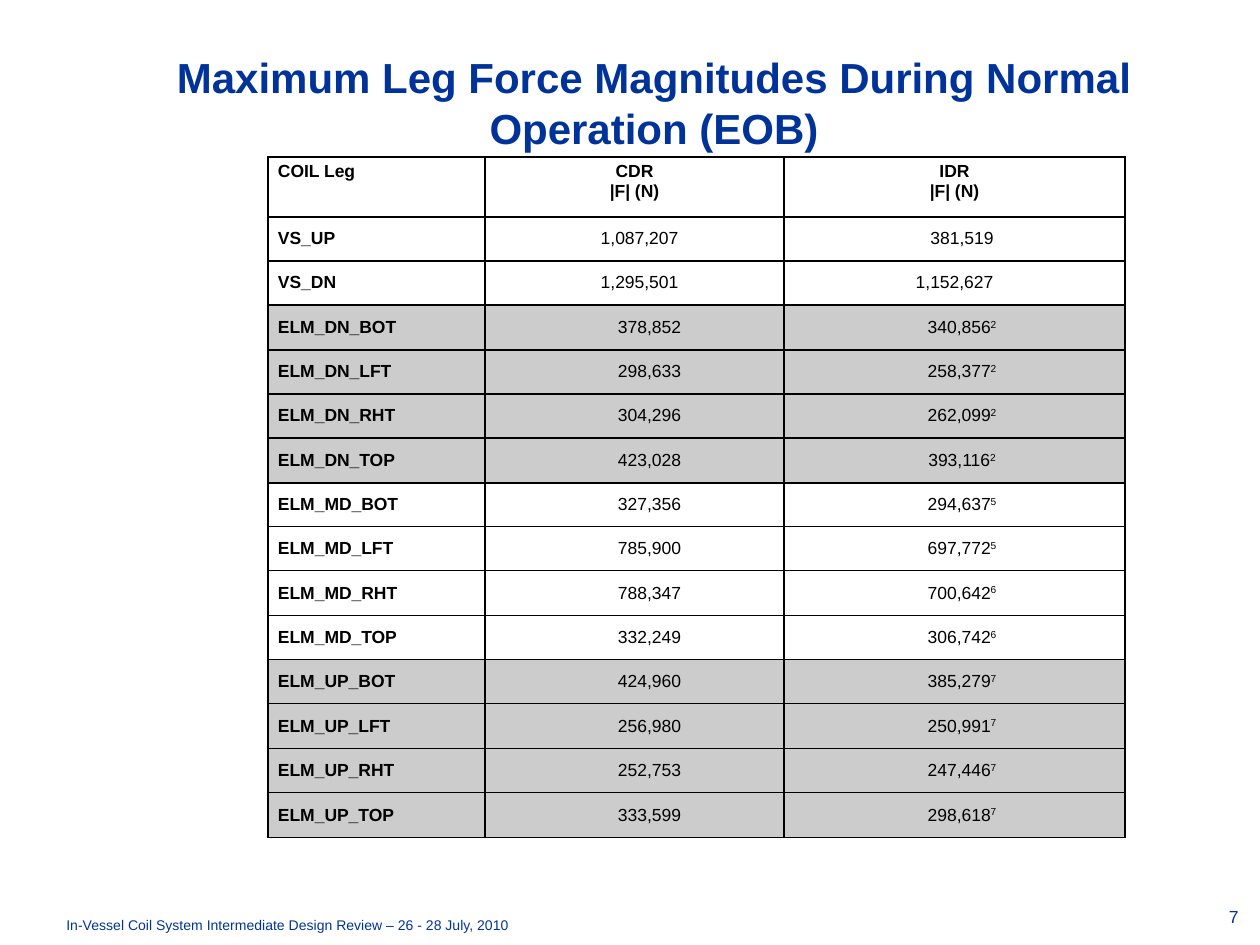
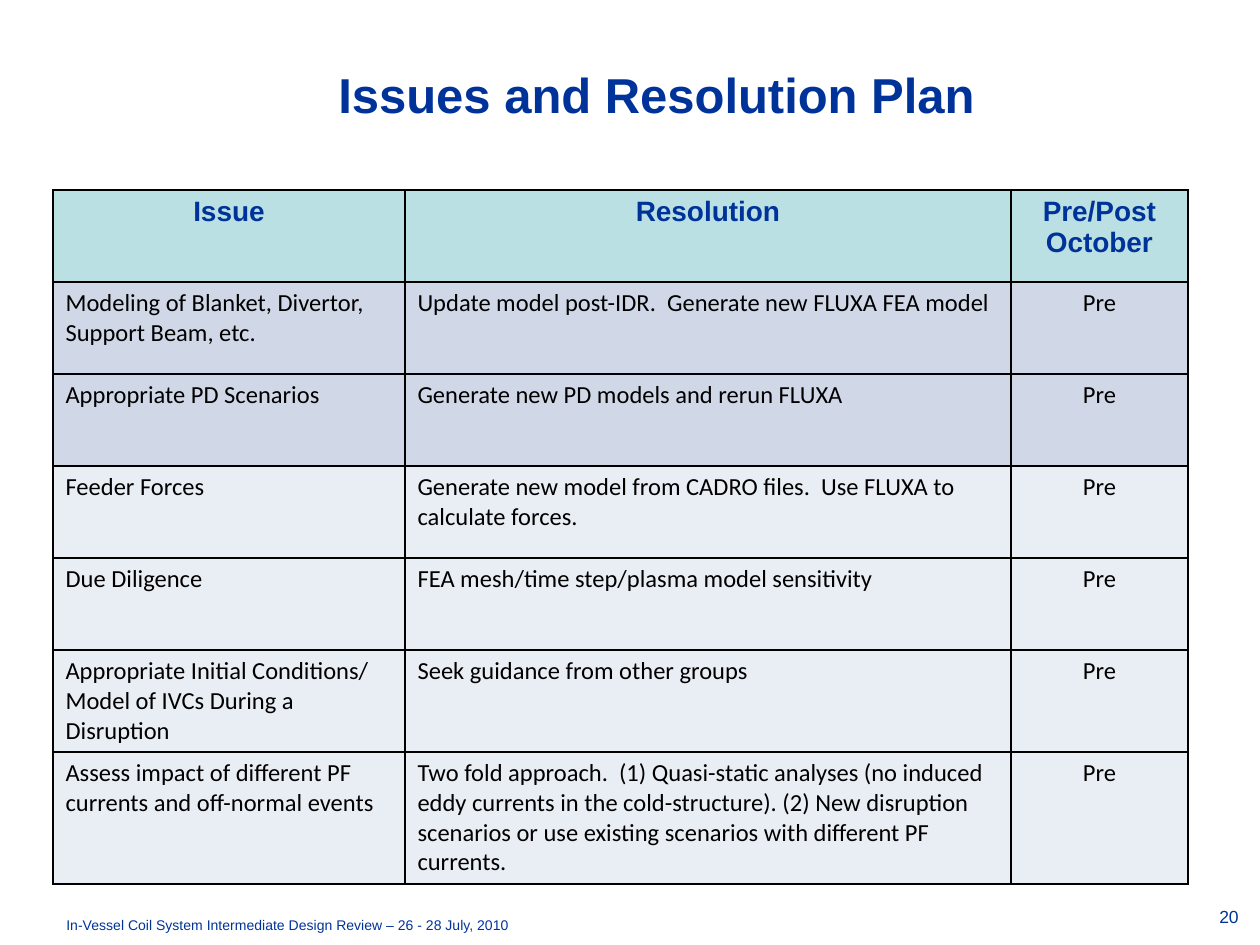
from lxml import etree
from pptx import Presentation
from pptx.dml.color import RGBColor
from pptx.enum.text import MSO_ANCHOR, MSO_AUTO_SIZE, PP_ALIGN
from pptx.oxml.ns import qn
from pptx.util import Emu, Pt

LEFT, CENTER, RIGHT = PP_ALIGN.LEFT, PP_ALIGN.CENTER, PP_ALIGN.RIGHT
TOP, MIDDLE = MSO_ANCHOR.TOP, MSO_ANCHOR.MIDDLE
NO_AUTOFIT = MSO_AUTO_SIZE.NONE

NAVY = RGBColor(0x00, 0x33, 0x99)
BLACK = RGBColor(0x00, 0x00, 0x00)
WHITE = RGBColor(0xFF, 0xFF, 0xFF)
GREY = RGBColor(0xCC, 0xCC, 0xCC)
TEAL = RGBColor(0xBB, 0xE0, 0xE3)
BLUE_TINT = RGBColor(0xD0, 0xD8, 0xE8)
PALE_TINT = RGBColor(0xE9, 0xED, 0xF4)

PX = 914400 / 126  # EMU in one px
FOOTER = "In-Vessel Coil System Intermediate Design Review – 26 - 28 July, 2010"


def write(text_frame, text, size, color, align=LEFT, bold=False, font="Arial"):
    text_frame.text = text
    text_frame.word_wrap = True
    for paragraph in text_frame.paragraphs:
        paragraph.alignment = align
        for run in paragraph.runs:
            run.font.name = font
            run.font.size = Pt(size)
            run.font.bold = bold
            run.font.color.rgb = color


def style_cell(cell, fill, anchor=TOP):
    cell.vertical_anchor = anchor
    properties = cell._tc.get_or_add_tcPr()
    for side in ("a:lnL", "a:lnR", "a:lnT", "a:lnB"):
        line = etree.SubElement(properties, qn(side), w=str(Pt(1)))
        solid = etree.SubElement(line, qn("a:solidFill"))
        etree.SubElement(solid, qn("a:srgbClr"), val=str(BLACK))
    cell.fill.solid()
    cell.fill.fore_color.rgb = fill


presentation = Presentation()
presentation.slide_width = Emu(round(1260 * PX))
presentation.slide_height = Emu(round(945 * PX))
title_only = presentation.slide_layouts[5]

# Titles, footers and empty tables: title, size, title box, page,
# table corner, column widths, row heights
force_heights = [60] + [(i + 1) * 621 // 14 - i * 621 // 14 for i in range(14)]
pages = [
    ("Maximum Leg Force Magnitudes During Normal Operation (EOB)", 24,
     (87, 42, 1134, 120), "7", (268, 157), (217, 299, 341), force_heights),
    ("Issues and Resolution Plan", 28,
     (297, 62, 719, 63), "20", (53, 190), (352, 606, 177), [92] * 5 + [102, 132]),
]
tables = []
for title_text, title_size, title_box, page, corner, widths, heights in pages:
    slide = presentation.slides.add_slide(title_only)
    title = slide.shapes.title
    title.left, title.top, title.width, title.height = [
        Emu(round(length * PX)) for length in title_box]
    write(title.text_frame, title_text, title_size, NAVY, CENTER, True)
    title.text_frame.vertical_anchor = MIDDLE
    title.text_frame.auto_size = NO_AUTOFIT

    for box, text, size, align in (
        ((54, 910, 565, 26), FOOTER, 8, LEFT),
        ((1147, 900, 104, 55), page, 10, RIGHT),
    ):
        text_box = slide.shapes.add_textbox(*[Emu(round(length * PX)) for length in box])
        write(text_box.text_frame, text, size, NAVY, align)

    table_box = [*corner, sum(widths), sum(heights)]
    table = slide.shapes.add_table(
        len(heights), len(widths), *[Emu(round(length * PX)) for length in table_box]).table
    table.first_row = False
    table.horz_banding = False
    for column, width in zip(table.columns, widths):
        column.width = Emu(round(width * PX))
    for row, height in zip(table.rows, heights):
        row.height = Emu(round(height * PX))
    tables.append(table)
force_table, issue_table = tables

# Leg forces: coil leg, CDR force, IDR force, footnote mark
leg_forces = [
    ("VS_UP", "1,087,207", "381,519", ""),
    ("VS_DN", "1,295,501", "1,152,627", ""),
    ("ELM_DN_BOT", "378,852", "340,856", "2"),
    ("ELM_DN_LFT", "298,633", "258,377", "2"),
    ("ELM_DN_RHT", "304,296", "262,099", "2"),
    ("ELM_DN_TOP", "423,028", "393,116", "2"),
    ("ELM_MD_BOT", "327,356", "294,637", "5"),
    ("ELM_MD_LFT", "785,900", "697,772", "5"),
    ("ELM_MD_RHT", "788,347", "700,642", "6"),
    ("ELM_MD_TOP", "332,249", "306,742", "6"),
    ("ELM_UP_BOT", "424,960", "385,279", "7"),
    ("ELM_UP_LFT", "256,980", "250,991", "7"),
    ("ELM_UP_RHT", "252,753", "247,446", "7"),
    ("ELM_UP_TOP", "333,599", "298,618", "7"),
]
force_rows = [("COIL Leg", "CDR\n|F| (N)", "IDR\n|F| (N)", "")] + leg_forces
for row_index, (leg, cdr, idr, mark) in enumerate(force_rows):
    is_header = row_index == 0
    fill = GREY if leg.startswith(("ELM_DN", "ELM_UP")) else WHITE
    # Left insets shift the centred numbers so that their digits line up
    insets = (10, 10 if leg.startswith("VS") else 30, 0 if len(idr) > 7 else 15)
    for column_index, text in enumerate((leg, cdr, idr)):
        cell = force_table.cell(row_index, column_index)
        is_number = column_index > 0 and not is_header
        write(cell.text_frame, text, 10, BLACK,
              CENTER if column_index else LEFT, not is_number)
        style_cell(cell, fill, TOP if is_header else MIDDLE)
        cell.margin_left = Emu(round((insets[column_index] if is_number else 10) * PX))
        cell.margin_right = Emu(0 if is_number else round(10 * PX))
        cell.margin_top = cell.margin_bottom = Emu(0 if is_number else round(5 * PX))
    if mark:
        run = cell.text_frame.paragraphs[0].add_run()
        run.text = mark
        run.font.name = "Arial"
        run.font.size = Pt(10)
        run.font.bold = False
        run.font.color.rgb = BLACK
        run._r.get_or_add_rPr().set("baseline", "30000")

# Issues, resolutions and timing
issue_rows = [
    ("Issue", "Resolution", "Pre/Post October"),
    ("Modeling of Blanket, Divertor, Support Beam, etc.",
     "Update model post-IDR.  Generate new FLUXA FEA model", "Pre"),
    ("Appropriate PD Scenarios", "Generate new PD models and rerun FLUXA", "Pre"),
    ("Feeder Forces",
     "Generate new model from CADRO files.  Use FLUXA to calculate forces.", "Pre"),
    ("Due Diligence", "FEA mesh/time step/plasma model sensitivity", "Pre"),
    ("Appropriate Initial Conditions/ Model of IVCs During a Disruption",
     "Seek guidance from other groups", "Pre"),
    ("Assess impact of different PF currents and off-normal events",
     "Two fold approach.  (1) Quasi-static analyses (no induced eddy currents in the "
     "cold-structure). (2) New disruption scenarios or use existing scenarios with "
     "different PF currents.", "Pre"),
]
issue_fills = [TEAL] + [BLUE_TINT] * 2 + [PALE_TINT] * 4
for row_index, (texts, fill) in enumerate(zip(issue_rows, issue_fills)):
    for column_index, text in enumerate(texts):
        cell = issue_table.cell(row_index, column_index)
        if row_index == 0:
            write(cell.text_frame, text, 16, NAVY, CENTER, True)
        else:
            write(cell.text_frame, text, 14, BLACK,
                  CENTER if column_index == 2 else LEFT, font="Calibri")
        style_cell(cell, fill)

presentation.save("out.pptx")
